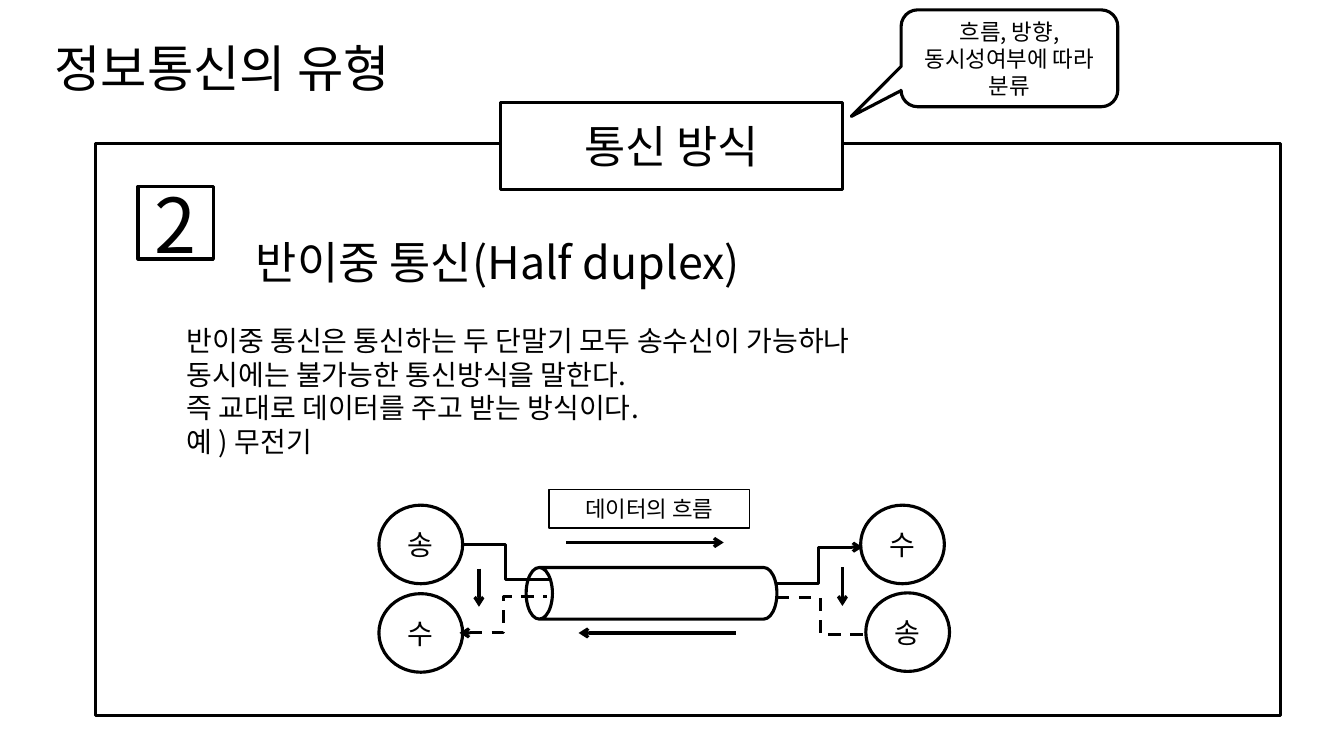
from dataclasses import dataclass

from lxml.etree import SubElement
from pptx import Presentation
from pptx.dml.color import RGBColor
from pptx.enum.dml import MSO_LINE
from pptx.enum.shapes import MSO_CONNECTOR, MSO_SHAPE
from pptx.enum.text import MSO_ANCHOR, MSO_AUTO_SIZE, PP_ALIGN
from pptx.oxml.ns import qn
from pptx.util import Cm, Pt


@dataclass(frozen=True)
class Theme:
    font: str = "Noto Sans CJK KR"
    ink: RGBColor = RGBColor(0, 0, 0)
    paper: RGBColor = RGBColor(255, 255, 255)
    title: int = 36
    heading: int = 32
    number: int = 54
    body: int = 20
    label: int = 16
    line: float = 2.25
    thin_line: float = 1
    line_height: float = 1.2


THEME = Theme()


def write_text(shape, lines, size, alignment=PP_ALIGN.LEFT, anchor=MSO_ANCHOR.TOP):
    frame = shape.text_frame
    frame.word_wrap = True
    frame.auto_size = MSO_AUTO_SIZE.NONE
    frame.vertical_anchor = anchor
    for index, line in enumerate(lines):
        paragraph = frame.paragraphs[0] if index == 0 else frame.add_paragraph()
        properties = paragraph._p.get_or_add_pPr()
        properties.set("marL", "0")
        properties.set("indent", "0")
        SubElement(properties, qn("a:buNone"))
        paragraph.alignment = alignment
        paragraph.space_before = Pt(0)
        paragraph.line_spacing = Pt(size * THEME.line_height)
        run = paragraph.add_run()
        run.text = line
        run.font.size = Pt(size)
        run.font.name = THEME.font
        run.font.color.rgb = THEME.ink
        east_asian = SubElement(run._r.get_or_add_rPr(), qn("a:ea"))
        east_asian.set("typeface", THEME.font)


def place(shape, left, top, width, height):
    shape.left, shape.top = Cm(left), Cm(top)
    shape.width, shape.height = Cm(width), Cm(height)


def add_outlined(slide, kind, box, lines=(), size=THEME.body, line_width=THEME.line):
    shape = slide.shapes.add_shape(kind, *map(Cm, box))
    shape.shadow.inherit = False
    shape.fill.solid()
    shape.fill.fore_color.rgb = THEME.paper
    shape.line.color.rgb = THEME.ink
    shape.line.width = Pt(line_width)
    write_text(shape, lines, size, PP_ALIGN.CENTER, MSO_ANCHOR.MIDDLE)
    return shape


def add_line(slide, kind, points, arrow=None, dashed=False):
    connector = slide.shapes.add_connector(kind, *map(Cm, points))
    connector.line.color.rgb = THEME.ink
    connector.line.width = Pt(THEME.line)
    if dashed:
        connector.line.dash_style = MSO_LINE.DASH
    if arrow:
        outline = connector.line._get_or_add_ln()
        SubElement(outline, qn(f"a:{arrow}")).set("type", "arrow")
    SubElement(connector._element.spPr, qn("a:effectLst"))


def add_headings(slide):
    title = slide.shapes.title
    place(title, 1.12, 0.81, 12.01, 1.8)
    write_text(title, ["정보통신의 유형"], THEME.title)

    rectangle = MSO_SHAPE.RECTANGLE
    add_outlined(slide, rectangle, (2.41, 3.61, 29.87, 14.43))
    add_outlined(slide, rectangle, (12.62, 2.59, 8.61, 2.18), ["통신 방식"], THEME.heading)
    add_outlined(slide, rectangle, (3.48, 4.7, 1.9, 1.83), ["2"], THEME.number)

    subject = slide.shapes.add_textbox(Cm(6.2), Cm(5.79), Cm(15.06), Cm(1.63))
    write_text(subject, ["반이중 통신(Half duplex)"], THEME.heading)


def add_description(slide):
    body = slide.placeholders[1]
    place(body, 4.45, 8.03, 19.86, 3.68)
    write_text(body, [
        "반이중 통신은 통신하는 두 단말기 모두 송수신이 가능하나",
        "동시에는 불가능한 통신방식을 말한다.",
        "즉 교대로 데이터를 주고 받는 방식이다.",
        "예 ) 무전기",
    ], THEME.body)
    body._element.getparent().append(body._element)


def add_diagram(slide):
    channel = add_outlined(slide, MSO_SHAPE.CAN, (15.77, 11.79, 1.3, 6.32))
    channel.rotation = 270
    channel.adjustments[0] = 0.51

    terminals = [
        ("송", 9.55, 12.73),
        ("수", 9.55, 14.96),
        ("수", 21.69, 12.73),
        ("송", 21.82, 14.94),
    ]
    for role, left, top in terminals:
        add_outlined(slide, MSO_SHAPE.OVAL, (left, top, 2.11, 1.98), [role])

    add_outlined(slide, MSO_SHAPE.RECTANGLE, (13.84, 12.34, 5.05, 0.97),
                 ["데이터의 흐름"], THEME.label, THEME.thin_line)

    flow_arrows = [
        ((14.27, 13.67, 18.24, 13.67), "tailEnd"),
        ((14.58, 15.95, 18.54, 15.95), "headEnd"),
        ((12.07, 14.33, 12.07, 15.29), "tailEnd"),
        ((21.23, 14.3, 21.23, 15.27), "tailEnd"),
    ]
    for points, arrow in flow_arrows:
        add_line(slide, MSO_CONNECTOR.STRAIGHT, points, arrow)

    wires = [
        ((11.63, 13.72, 13.84, 14.61), None, False),
        ((19.58, 15.06, 21.77, 15.98), None, True),
        ((11.58, 15.95, 13.79, 15.04), "headEnd", True),
        ((19.53, 14.71, 21.74, 13.79), "tailEnd", False),
    ]
    for points, arrow, dashed in wires:
        add_line(slide, MSO_CONNECTOR.ELBOW, points, arrow, dashed)


def add_callout(slide):
    callout = add_outlined(slide, MSO_SHAPE.ROUNDED_RECTANGULAR_CALLOUT,
                           (22.71, 0.25, 5.46, 2.44),
                           ["흐름, 방향,", "동시성여부에 따라", "분류"], THEME.label)
    for index, value in enumerate((-0.73, 0.6, 0.17)):
        callout.adjustments[index] = value


def main():
    presentation = Presentation()
    presentation.slide_width = Cm(33.87)
    presentation.slide_height = Cm(19.05)
    slide = presentation.slides.add_slide(presentation.slide_layouts[1])
    add_headings(slide)
    add_description(slide)
    add_diagram(slide)
    add_callout(slide)
    presentation.save("out.pptx")


if __name__ == "__main__":
    main()
